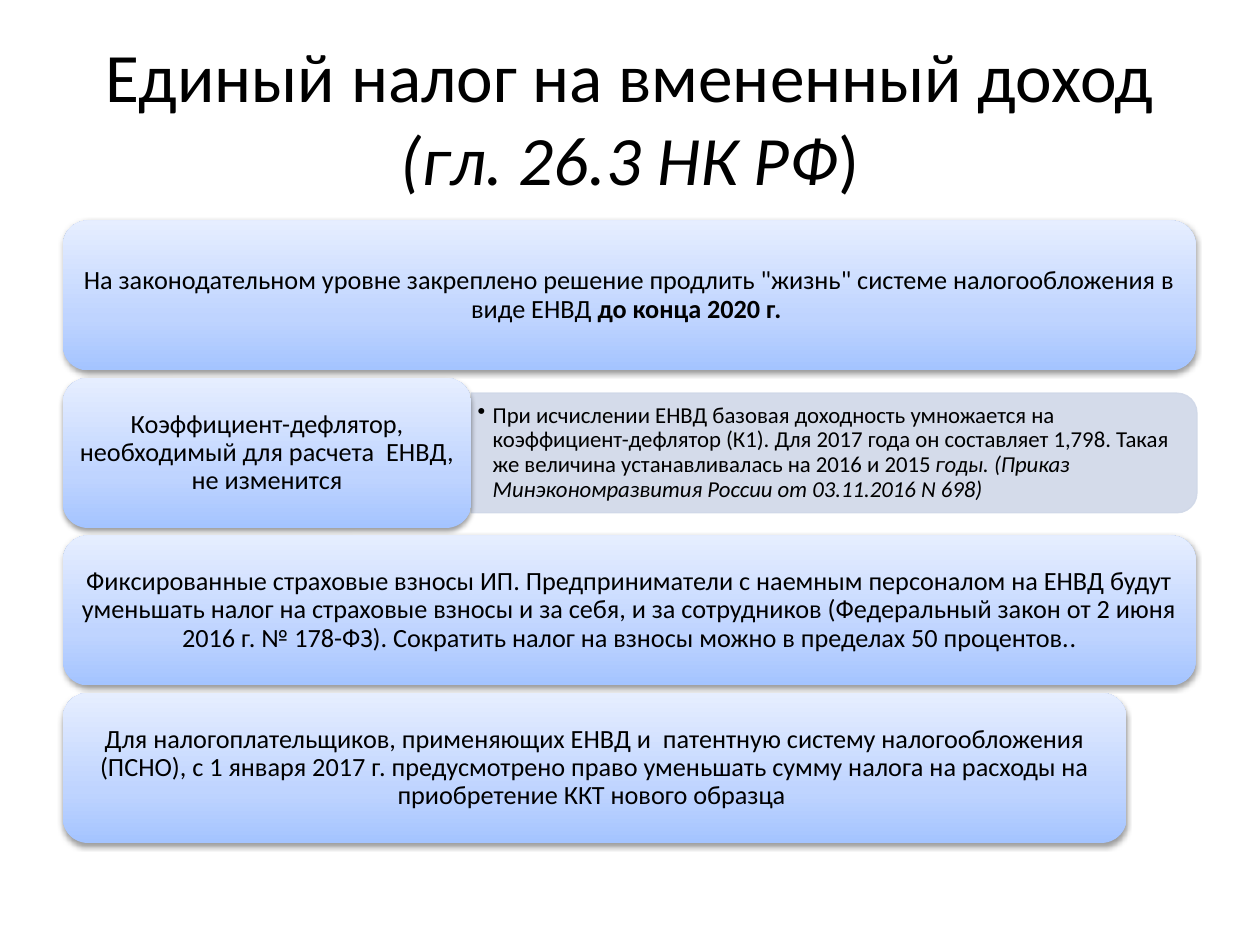
from copy import deepcopy

from lxml import etree
from pptx import Presentation
from pptx.dml.color import RGBColor
from pptx.enum.shapes import MSO_SHAPE
from pptx.enum.text import MSO_ANCHOR, PP_ALIGN
from pptx.oxml.ns import qn
from pptx.util import Inches, Pt

CARD, PLATE = MSO_SHAPE.ROUNDED_RECTANGLE, MSO_SHAPE.ROUND_2_SAME_RECTANGLE
MIDDLE = MSO_ANCHOR.MIDDLE
CENTER, LEFT = PP_ALIGN.CENTER, PP_ALIGN.LEFT

THEME = {
    "font": "Calibri", "ink": "000000", "plate": "D0D8E8",
    "title": 39.6, "body": 15, "note": 13,
    "stops": [(0, "A4C4FF"), (0.35, "BFD4FF"), (1, "E6EEFF")],
}

# Each run is its text and its style: "" plain, "b" bold, "i" italic
TITLE = [("Единый налог на вмененный доход ", ""), ("(гл. 26.3 НК РФ", "i"), (")", "")]
NOTE = [
    ("При исчислении ЕНВД базовая доходность умножается на коэффициент-дефлятор (К1). "
     "Для 2017 года он составляет 1,798. Такая же величина устанавливалась на 2016 и 2015 ", ""),
    ("годы. (Приказ Минэкономразвития России от 03.11.2016 N 698)", "i"),
]
# Width, runs, side note
ROWS = [
    (8.99, [("На законодательном уровне закреплено решение продлить \"жизнь\" системе "
             "налогообложения в виде ЕНВД ", ""), ("до конца 2020 г. ", "b")], None),
    (3.24, [("Коэффициент-дефлятор, необходимый для расчета  ЕНВД, не изменится", "")], NOTE),
    (8.99, [("Фиксированные страховые взносы ИП. Предприниматели с наемным персоналом на ЕНВД "
             "будут уменьшать налог на страховые взносы и за себя, и за сотрудников "
             "(Федеральный закон от 2 июня 2016 г. № 178-ФЗ). Сократить налог на взносы "
             "можно в пределах 50 процентов.", ""), (".", "i")], None),
    (8.44, [("Для налогоплательщиков, применяющих ЕНВД и  патентную систему налогообложения "
             "(ПСНО), с 1 января 2017 г. предусмотрено право уменьшать сумму налога на расходы "
             "на приобретение ККТ нового образца ", "")], None),
]
X, TOP, STEP, TALL = 0.5, 1.75, 1.25, 1.19
PLATE_W, PLATE_H = 5.76, 0.95
NOTE_W, NOTE_H = 5.71, 0.86


def box(left, top, width, height):
    return [Inches(v) for v in (left, top, width, height)]


def sub(parent, tag, **attrs):
    return etree.SubElement(parent, qn(tag), {k: str(v) for k, v in attrs.items()})


def write(shape, runs, size, align, pad=None, **para):
    frame = shape.text_frame
    frame.word_wrap, frame.vertical_anchor = True, MIDDLE
    if pad:
        form = dict(zip(("margin_left", "margin_right", "margin_top", "margin_bottom"),
                        map(Inches, (pad, pad, 0.03, 0.03))))
        for key, value in form.items():
            setattr(frame, key, value)
    line = frame.paragraphs[0]
    for key, value in {"alignment": align, **para}.items():
        setattr(line, key, value)
    for text, style in runs:
        run = line.add_run()
        run.text = text
        form = {"name": THEME["font"], "size": Pt(size),
                "bold": "b" in style, "italic": "i" in style}
        for key, value in form.items():
            setattr(run.font, key, value)
        run.font.color.rgb = RGBColor.from_string(THEME["ink"])
    return line


def shade(shape):
    """Fill with the three-stop gradient and cast a soft shadow downwards."""
    fill = shape.fill
    fill.gradient()
    fill.gradient_angle = 90
    stops = shape._element.spPr.find(qn("a:gradFill")).find(qn("a:gsLst"))
    stops.append(deepcopy(stops[-1]))
    for stop, (place, color) in zip(fill.gradient_stops, THEME["stops"]):
        stop.position = place
        stop.color.rgb = RGBColor.from_string(color)
    shape.line.fill.background()
    shape.shadow.inherit = False
    effects = shape._element.spPr.find(qn("a:effectLst"))
    shadow = sub(effects, "a:outerShdw", blurRad=Pt(3.1), dist=Pt(1.6),
                 dir=5400000, rotWithShape=0)
    sub(sub(shadow, "a:srgbClr", val=THEME["ink"]), "a:alpha", val=38000)


def add_note(shapes, left, mid, runs):
    """Draw the plate turned on its side, with its bulleted text upright above it."""
    plate = shapes.add_shape(PLATE, *box(left + (PLATE_W - PLATE_H) / 2, mid - PLATE_W / 2,
                                         PLATE_H, PLATE_W))
    plate.rotation = 90
    plate.shadow.inherit = False
    plate.line.width = Pt(0.75)
    for fill in (plate.fill, plate.line.fill):
        fill.solid()
        fill.fore_color.rgb = RGBColor.from_string(THEME["plate"])
    for color in plate._element.spPr.iter(qn("a:srgbClr")):
        sub(color, "a:alpha", val=90000)

    text = shapes.add_textbox(*box(left, mid - NOTE_H / 2, NOTE_W, NOTE_H))
    line = write(text, runs, THEME["note"], LEFT, 0.05, line_spacing=0.9)
    props = line._p.get_or_add_pPr()
    props.set("marL", str(Inches(0.12)))
    props.set("indent", str(Inches(-0.12)))
    sub(props, "a:buChar", char="•")


def main():
    deck = Presentation()
    deck.slide_width, deck.slide_height = Inches(10), Inches(7.5)
    slide = deck.slides.add_slide(deck.slide_layouts[5])
    shapes = slide.shapes

    title = shapes.title
    title.left, title.top, title.width, title.height = box(X, 0.3, 9, 1.25)
    write(title, TITLE, THEME["title"], CENTER)

    for i, (width, runs, note) in enumerate(ROWS):
        top = TOP + i * STEP
        if note:
            add_note(shapes, X + width, top + TALL / 2, note)
        card = shapes.add_shape(CARD, *box(X, top, width, TALL))
        shade(card)
        write(card, runs, THEME["body"], CENTER, 0.06, line_spacing=0.9)

    deck.save("out.pptx")


if __name__ == "__main__":
    main()
